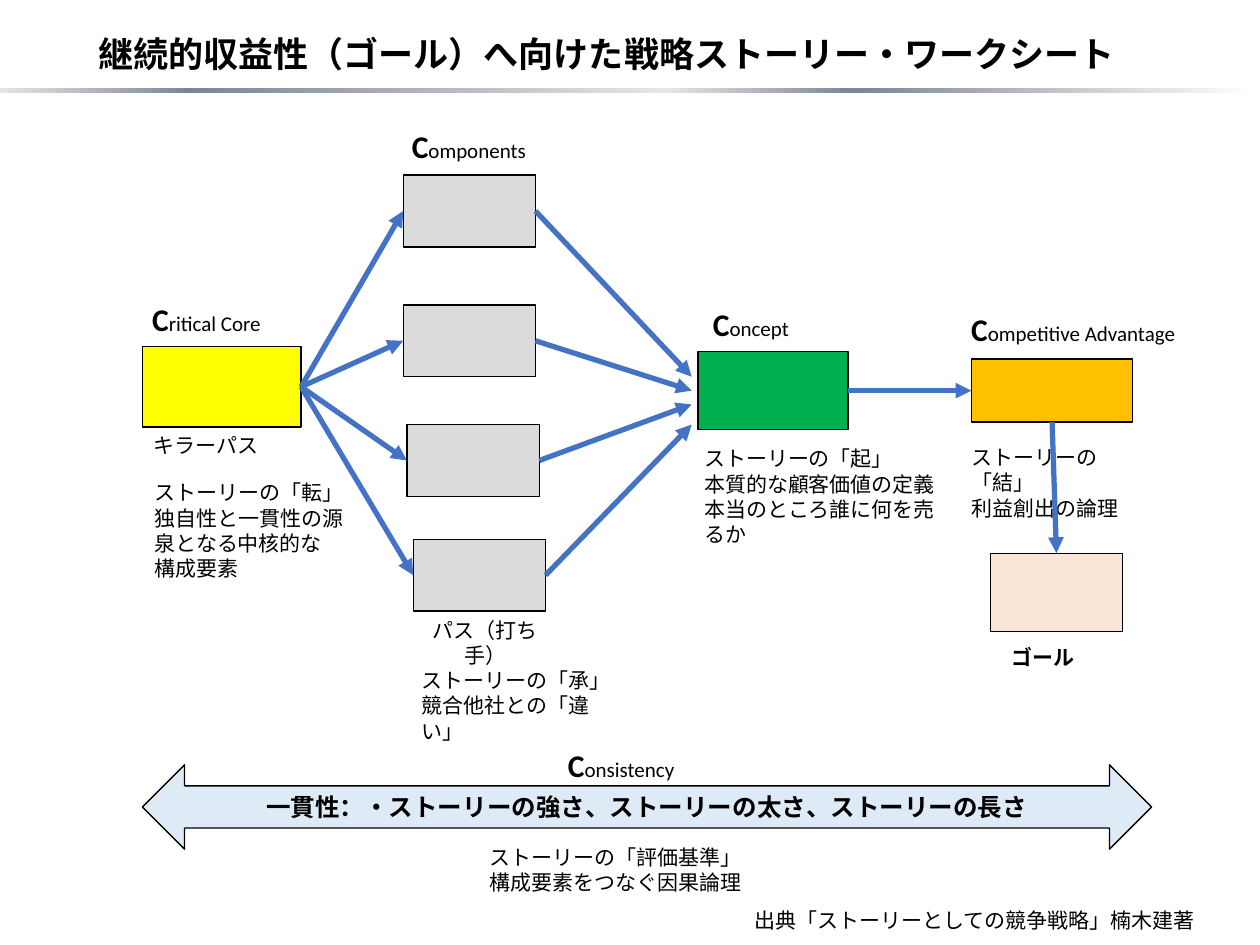
from lxml import etree
from pptx import Presentation
from pptx.dml.color import RGBColor
from pptx.enum import shapes as s, text as t
from pptx.oxml.ns import qn
from pptx.util import Inches, Pt

BLACK = RGBColor(0, 0, 0)
BLUE = RGBColor(0x44, 0x72, 0xC4)
YELLOW = RGBColor(0xFF, 0xFF, 0x00)
GRAY = RGBColor(0xDB, 0xDB, 0xDB)
GREEN = RGBColor(0x00, 0xB0, 0x50)
GOLD = RGBColor(0xFF, 0xC0, 0x00)
PEACH = RGBColor(0xFB, 0xE5, 0xD6)
PALE = RGBColor(0xDE, 0xEB, 0xF7)
SILVER = RGBColor(0xE6, 0xE6, 0xE6)
SLATE = RGBColor(0x7D, 0x84, 0x96)
WHITE = RGBColor(0xFF, 0xFF, 0xFF)

# Connection sites of a rectangle
TOP, LEFT, BOTTOM, RIGHT = range(4)


def style(run, size=12, bold=False, face="Calibri"):
    run.font.size = Pt(size)
    run.font.bold = bold
    run.font.name = face
    run.font.color.rgb = BLACK


def add_text(slide, area, lines, center=False, bold=False):
    box = slide.shapes.add_textbox(*map(Inches, area))
    frame = box.text_frame
    frame.word_wrap = True
    frame.text = "\n".join(lines)
    for para in frame.paragraphs:
        para.alignment = t.PP_ALIGN.CENTER if center else t.PP_ALIGN.LEFT
        for run in para.runs:
            style(run, bold=bold)


def add_head(slide, area, rest):
    """Heading with a large bold C followed by the rest of the word."""
    box = slide.shapes.add_textbox(*map(Inches, area))
    box.text_frame.word_wrap = True
    para = box.text_frame.paragraphs[0]
    for word, size, bold in (("C", 18, True), (rest, 12, False)):
        run = para.add_run()
        run.text = word
        style(run, size, bold)


def add_block(slide, area, fill, kind=s.MSO_SHAPE.RECTANGLE):
    block = slide.shapes.add_shape(kind, *map(Inches, area))
    block.shadow.inherit = False
    block.fill.solid()
    block.fill.fore_color.rgb = fill
    block.line.color.rgb = BLACK
    block.line.width = Pt(0.75)
    return block


def add_arrow(slide, start, side, end=None, spot=(0, 0)):
    """Arrow from a side of one block to another block or a free spot."""
    x, y = map(Inches, spot)
    arrow = slide.shapes.add_connector(s.MSO_CONNECTOR.STRAIGHT, x, y, x, y)
    arrow.begin_connect(start, side)
    if end is not None:
        arrow.end_connect(end, TOP if side == BOTTOM else LEFT)
    arrow.line.color.rgb = BLUE
    arrow.line.width = Pt(3)
    line = arrow.line._get_or_add_ln()
    etree.SubElement(line, qn("a:tailEnd"), type="triangle")
    etree.SubElement(arrow._element.spPr, qn("a:effectLst"))


def add_title(slide):
    title = slide.shapes.title
    title.left, title.top = Inches(0.07), Inches(0.04)
    title.width, title.height = Inches(9.49), Inches(0.61)
    frame = title.text_frame
    frame.text = "継続的収益性（ゴール）へ向けた戦略ストーリー・ワークシート"
    frame.word_wrap = True
    frame.vertical_anchor = t.MSO_ANCHOR.MIDDLE
    para = frame.paragraphs[0]
    para.alignment = t.PP_ALIGN.CENTER
    para.line_spacing = 1.5
    style(para.runs[0], 20, True, "Noto Sans CJK JP")


def add_rule(slide):
    """Metallic rule below the title."""
    rule = add_block(slide, (0, 0.7, 9.96, 0.04), SILVER)
    rule.line.fill.background()
    rule.fill.gradient()
    rule.fill.gradient_angle = 180
    stops = rule._element.spPr.find(qn("a:gradFill")).find(qn("a:gsLst"))
    for old in list(stops):
        stops.remove(old)
    for place, color in ((0, WHITE), (7, SILVER), (32, SLATE),
                         (47, SILVER), (85, SLATE), (100, SILVER)):
        stop = etree.SubElement(stops, qn("a:gs"), pos=str(place * 1000))
        etree.SubElement(stop, qn("a:srgbClr"), val=str(color))


def main():
    deck = Presentation()
    deck.slide_width, deck.slide_height = Inches(10), Inches(7.5)
    slide = deck.slides.add_slide(deck.slide_layouts[5])
    add_title(slide)
    add_rule(slide)

    # Blocks of the story
    core = add_block(slide, (1.13, 2.75, 1.26, 0.64), YELLOW)
    parts = [add_block(slide, (x, y, 1.05, 0.57), GRAY)
             for x, y in ((3.2, 1.39), (3.2, 2.42), (3.23, 3.37), (3.28, 4.28))]
    concept = add_block(slide, (5.54, 2.79, 1.19, 0.62), GREEN)
    edge = add_block(slide, (7.71, 2.85, 1.28, 0.5), GOLD)
    goal = add_block(slide, (7.86, 4.39, 1.05, 0.62), PEACH)

    # Headings of the five Cs
    for area, rest in (
        ((1.11, 2.33, 1.27, 0.4), "ritical Core"),
        ((3.17, 0.96, 1.27, 0.4), "omponents"),
        ((5.56, 2.37, 0.96, 0.4), "oncept"),
        ((7.61, 2.41, 1.93, 0.4), "ompetitive Advantage"),
        ((4.41, 5.87, 1.27, 0.4), "onsistency"),
    ):
        add_head(slide, area, rest)

    # Captions
    add_text(slide, (0.87, 3.38, 1.53, 0.3), ["キラーパス"], center=True)
    add_text(slide, (3.2, 4.85, 1.3, 0.5), ["パス（打ち手）"], center=True)
    add_text(slide, (7.74, 5.07, 1.08, 0.3), ["ゴール"], center=True, bold=True)

    # Notes on each role
    for area, lines in (
        ((1.13, 3.76, 1.8, 0.91),
         ["ストーリーの「転」", "独自性と一貫性の源泉となる中核的な", "構成要素"]),
        ((3.25, 5.25, 1.8, 0.5), ["ストーリーの「承」", "競合他社との「違い」"]),
        ((5.49, 3.49, 2.07, 0.91),
         ["ストーリーの「起」", "本質的な顧客価値の定義", "本当のところ誰に何を売るか"]),
        ((7.61, 3.48, 1.53, 0.5), ["ストーリーの「結」", "利益創出の論理"]),
        ((3.79, 6.65, 2.25, 0.5),
         ["ストーリーの「評価基準」", "構成要素をつなぐ因果論理"]),
        ((5.89, 7.15, 3.82, 0.3), ["出典「ストーリーとしての競争戦略」楠木建著"]),
    ):
        add_text(slide, area, lines)

    # Arrows from core through parts to goal
    for part, y in zip(parts, (2.99, 3.1, 3.21, 3.37)):
        add_arrow(slide, core, RIGHT, part)
        add_arrow(slide, part, RIGHT, spot=(5.49, y))
    add_arrow(slide, concept, RIGHT, edge)
    add_arrow(slide, edge, BOTTOM, goal)

    # Consistency band
    band = add_block(slide, (1.13, 6.07, 8.01, 0.67), PALE,
                     s.MSO_SHAPE.LEFT_RIGHT_ARROW)
    band.text_frame.text = "一貫性：・ストーリーの強さ、ストーリーの太さ、ストーリーの長さ"
    para = band.text_frame.paragraphs[0]
    para.alignment = t.PP_ALIGN.CENTER
    style(para.runs[0], 14, True)

    deck.save("out.pptx")


if __name__ == "__main__":
    main()
